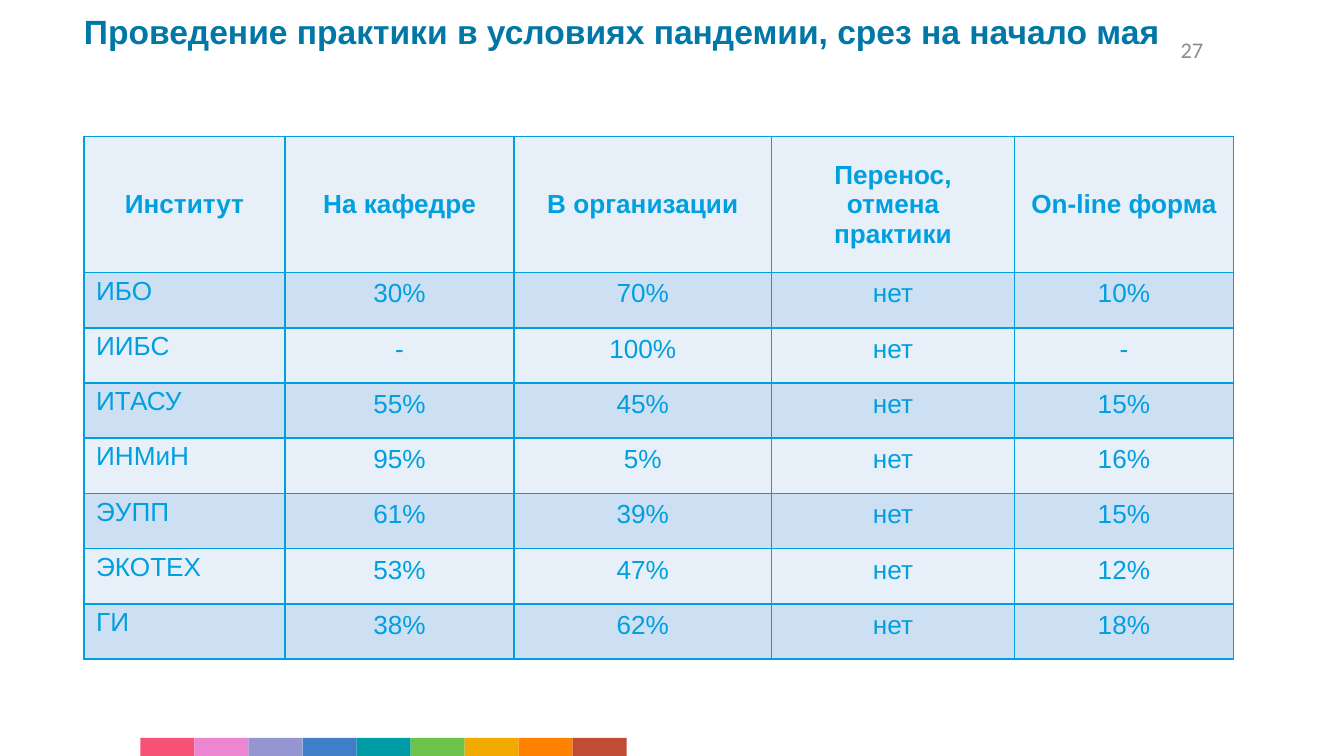
from dataclasses import dataclass

from lxml import etree
from pptx import Presentation
from pptx.dml.color import RGBColor
from pptx.enum.shapes import MSO_SHAPE
from pptx.enum.text import MSO_ANCHOR, PP_ALIGN
from pptx.oxml.ns import qn
from pptx.util import Inches, Pt

RECTANGLE = MSO_SHAPE.RECTANGLE
LEFT, CENTER, RIGHT = PP_ALIGN.LEFT, PP_ALIGN.CENTER, PP_ALIGN.RIGHT
TOP, MIDDLE = MSO_ANCHOR.TOP, MSO_ANCHOR.MIDDLE

PAGE_WIDTH = Inches(10)
PAGE_HEIGHT = PAGE_WIDTH * 9 // 16

BLUE, DARK_BLUE, GRAY = "009FDF", "0077A7", "8C8C8C"
PALE_BAND, DEEP_BAND = "E7F0F9", "CCDFF3"
STRIP_COLORS = ["F65275", "EC86D0", "9595D2", "407EC9", "009CA6",
                "6CC24A", "F2A900", "FF8200", "C04C36"]

HEADER = ["Институт", "На кафедре", "В организации",
          "Перенос, отмена практики", "On-line форма "]
INSTITUTES = [
    ["ИБО", "30%", "70%", "нет", "10%"],
    ["ИИБС", "-", "100%", "нет", "-"],
    ["ИТАСУ", "55%", "45%", "нет", "15%"],
    ["ИНМиН", "95%", "5%", "нет", "16%"],
    ["ЭУПП", "61%", "39%", "нет", "15%"],
    ["ЭКОТЕХ", "53%", "47%", "нет", "12%"],
    ["ГИ", "38%", "62%", "нет", "18%"],
]
COLUMN_WIDTHS = [14.96, 17.04, 19.16, 18.08, 16.29]  # percent of the page width
HEADER_HEIGHT, ROW_HEIGHT = 17.97, 7.31              # percent of the page height


def across(percent: float) -> int:
    return round(PAGE_WIDTH * percent / 100)


def down(percent: float) -> int:
    return round(PAGE_HEIGHT * percent / 100)


@dataclass(frozen=True)
class Area:
    """A rectangle in percent of the page size."""
    left: float
    top: float
    width: float
    height: float

    def lengths(self) -> tuple[int, int, int, int]:
        return (across(self.left), down(self.top),
                across(self.width), down(self.height))


@dataclass(frozen=True)
class TextStyle:
    size: float
    color: str
    font: str = "Arial"
    bold: bool = False
    align: PP_ALIGN = LEFT


def rgb(color: str) -> RGBColor:
    return RGBColor.from_string(color)


def write(frame, text: str, style: TextStyle) -> None:
    frame.text = text
    para = frame.paragraphs[0]
    para.alignment = style.align
    for span in para.runs:
        span.font.size = Pt(style.size)
        span.font.name = style.font
        span.font.bold = style.bold
        span.font.color.rgb = rgb(style.color)


def add_text(page, area: Area, text: str, style: TextStyle):
    box = page.shapes.add_textbox(*area.lengths())
    frame = box.text_frame
    frame.word_wrap = True
    frame.vertical_anchor = TOP
    frame.margin_left = frame.margin_right = 0
    frame.margin_top = frame.margin_bottom = 0
    write(frame, text, style)
    return frame.paragraphs[0]


def add_strip(page) -> None:
    for index, color in enumerate(STRIP_COLORS):
        area = Area(10.45 + 4.02 * index, 97.6, 4.02, 2.4)
        block = page.shapes.add_shape(RECTANGLE, *area.lengths())
        block.shadow.inherit = False
        block.fill.solid()
        block.fill.fore_color.rgb = rgb(color)
        block.line.fill.background()


def add_borders(cell, color: str, width: float) -> None:
    properties = cell._tc.get_or_add_tcPr()
    for side in ("a:lnL", "a:lnR", "a:lnT", "a:lnB"):
        line = etree.SubElement(properties, qn(side), w=str(Pt(width)))
        fill = etree.SubElement(line, qn("a:solidFill"))
        etree.SubElement(fill, qn("a:srgbClr"), val=color)


def fill_cell(cell, text: str, row: int, column: int) -> None:
    is_header = row == 0
    is_name = column == 0 and not is_header
    write(cell.text_frame, text, TextStyle(
        14, BLUE, bold=is_header, align=LEFT if is_name else CENTER))
    cell.vertical_anchor = MIDDLE if is_header else TOP
    if is_name:
        cell.margin_left = cell.margin_right = Inches(0.09)
        cell.margin_top = cell.margin_bottom = Inches(0.03)
    add_borders(cell, BLUE, 1)
    cell.fill.solid()
    cell.fill.fore_color.rgb = rgb(DEEP_BAND if row % 2 else PALE_BAND)


def add_practice_table(page) -> None:
    rows = [HEADER, *INSTITUTES]
    heights = [HEADER_HEIGHT] + [ROW_HEIGHT] * len(INSTITUTES)
    area = Area(6.25, 18.08, sum(COLUMN_WIDTHS), sum(heights))
    table = page.shapes.add_table(
        len(rows), len(HEADER), *area.lengths()).table
    for column, width in zip(table.columns, COLUMN_WIDTHS):
        column.width = across(width)
    for row, height in zip(table.rows, heights):
        row.height = down(height)
    for row, texts in enumerate(rows):
        for column, text in enumerate(texts):
            fill_cell(table.cell(row, column), text, row, column)


def main() -> None:
    deck = Presentation()
    deck.slide_width, deck.slide_height = PAGE_WIDTH, PAGE_HEIGHT
    page = deck.slides.add_slide(deck.slide_layouts[6])

    # Colour strip at the bottom edge
    add_strip(page)

    # Title
    title = add_text(page, Area(6.25, 2, 81.6, 14.4),
                     "Проведение практики в условиях пандемии, срез на начало мая",
                     TextStyle(18, DARK_BLUE, bold=True))
    title.line_spacing = Pt(19.6)

    # Practice by institute
    add_practice_table(page)

    # Page number
    add_text(page, Area(82.83, 4.8, 6.7, 4.8), "27",
             TextStyle(12, GRAY, font="Calibri", align=RIGHT))

    deck.save("out.pptx")


if __name__ == "__main__":
    main()
